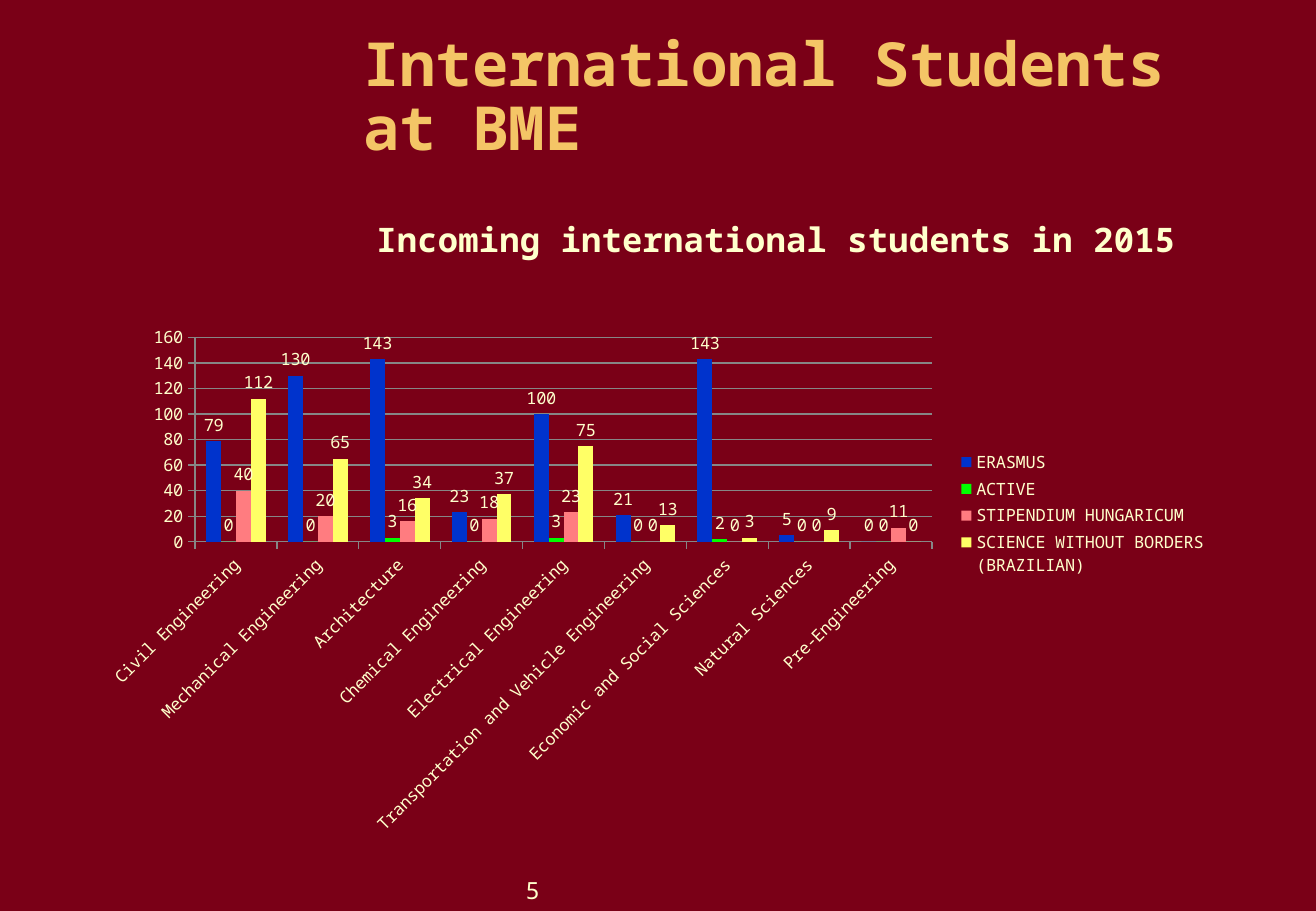
"""Build the slide on incoming international students."""
from lxml import etree
from pptx import Presentation
from pptx import util as u
from pptx.chart.data import CategoryChartData
from pptx.dml.color import RGBColor
from pptx.enum import chart as ch, text as tx
from pptx.oxml import parse_xml
from pptx.oxml.ns import nsdecls, qn

HEAD = "International Students at BME"
SUB = "Incoming international students in 2015"
PAGE = "5"
CATS = ["Civil Engineering", "Mechanical Engineering", "Architecture",
        "Chemical Engineering", "Electrical Engineering",
        "Transportation and Vehicle Engineering",
        "Economic and Social Sciences", "Natural Sciences", "Pre-Engineering"]
DATA = [
    ("ERASMUS", "blue", (79, 130, 143, 23, 100, 21, 143, 5, 0)),
    ("ACTIVE", "green", (0, 0, 3, 0, 3, 0, 2, 0, 0)),
    ("STIPENDIUM HUNGARICUM", "pink", (40, 20, 16, 18, 23, 0, 0, 0, 11)),
    ("SCIENCE WITHOUT BORDERS (BRAZILIAN)", "lemon",
     (112, 65, 34, 37, 75, 13, 3, 9, 0)),
]
COLORS = {"back": "7A0017", "gold": "F4C566", "cream": "FFFFCC",
          "grid": "868686", "blue": "0033CC", "green": "00FF00",
          "pink": "FF7C80", "lemon": "FFFF66"}
FONT = "Noto Sans Mono"
BOXES = {"head": (208, 16, 541.5, 85.5), "page": (304.5, 515.5, 163, 24.5),
         "chart": (52, 106, 670, 397)}


def color(key):
    return RGBColor.from_string(COLORS[key])


def put(obj, **vals):
    for key, val in vals.items():
        setattr(obj, key, val)


def style(font, size, key, bold=False):
    put(font, name=FONT, size=u.Pt(size), bold=bold)
    font.color.rgb = color(key)


def box(name):
    return [u.Pt(v) for v in BOXES[name]]


def place(node, spot, **vals):
    """Give a chart part a fixed place, as shares of the chart."""
    for old in node.findall(qn("c:layout")):
        node.remove(old)
    lay = etree.Element(qn("c:layout"))
    man = etree.SubElement(lay, qn("c:manualLayout"))
    for tag, val in vals.items():
        etree.SubElement(man, qn("c:" + tag)).set("val", str(val))
    node.insert(spot, lay)


def add_head(slide):
    title = slide.shapes.title
    put(title, **dict(zip(("left", "top", "width", "height"), box("head"))))
    frame = title.text_frame
    put(frame, text=HEAD, word_wrap=True, auto_size=tx.MSO_AUTO_SIZE.NONE,
        vertical_anchor=tx.MSO_ANCHOR.MIDDLE)
    para = frame.paragraphs[0]
    put(para, alignment=tx.PP_ALIGN.LEFT, line_spacing=0.88)
    run = para.runs[0]
    style(run.font, 36, "gold", True)
    shade = parse_xml(
        f'<a:effectLst {nsdecls("a")}><a:outerShdw dist="35921" dir="2700000">'
        '<a:srgbClr val="000000"/></a:outerShdw></a:effectLst>')
    run.font._element.find(qn("a:solidFill")).addnext(shade)


def add_page(slide):
    frame = slide.shapes.add_textbox(*box("page")).text_frame
    put(frame, text=PAGE, word_wrap=True)
    style(frame.paragraphs[0].runs[0].font, 14, "cream")


def add_bars(slide):
    data = CategoryChartData()
    data.categories = CATS
    for name, _, vals in DATA:
        data.add_series(name, vals)
    kind = ch.XL_CHART_TYPE.COLUMN_CLUSTERED
    chart = slide.shapes.add_chart(kind, *box("chart"), data).chart
    style(chart.font, 10, "cream")
    frame = chart.chart_title.text_frame
    frame.text = SUB
    style(frame.paragraphs[0].runs[0].font, 20, "cream", True)

    plot = chart.plots[0]
    put(plot, gap_width=150, overlap=0, vary_by_categories=False)
    for bar, (_, key, _) in zip(plot.series, DATA):
        bar.format.fill.solid()
        bar.format.fill.fore_color.rgb = color(key)
        labels = bar.data_labels
        put(labels, show_value=True, position=ch.XL_LABEL_POSITION.OUTSIDE_END)
        style(labels.font, 10, "cream")

    cat, val = chart.category_axis, chart.value_axis
    put(val, minimum_scale=0, maximum_scale=160, major_unit=20,
        has_major_gridlines=True)
    for axis in (cat, val):
        put(axis, major_tick_mark=ch.XL_TICK_MARK.OUTSIDE,
            minor_tick_mark=ch.XL_TICK_MARK.NONE)
        style(axis.tick_labels.font, 10, "cream")
    for part in (cat, val, val.major_gridlines):
        part.format.line.width = u.Pt(0.75)
        part.format.line.color.rgb = color("grid")
    turn = cat._element.find(qn("c:txPr")).find(qn("a:bodyPr"))
    turn.set("rot", "-2700000")

    chart.has_legend = True
    key = chart.legend
    put(key, position=ch.XL_LEGEND_POSITION.RIGHT, include_in_layout=False)
    style(key.font, 10, "cream")

    edge = {"xMode": "edge", "yMode": "edge"}
    place(chart.chart_title._element, 1, **edge, x=0.25, y=0.04)
    place(key._element, 1, **edge, x=0.77, y=0.4, w=0.22, h=0.2)
    area = chart._chartSpace.chart.plotArea
    place(area, 0, layoutTarget="inner", **edge,
          x=0.095, y=0.237, w=0.652, h=0.305)


def main():
    deck = Presentation()
    put(deck, slide_width=u.Pt(780), slide_height=u.Pt(540))
    slide = deck.slides.add_slide(deck.slide_layouts[5])
    fill = slide.background.fill
    fill.solid()
    fill.fore_color.rgb = color("back")
    add_head(slide)
    add_bars(slide)
    add_page(slide)
    deck.save("out.pptx")


if __name__ == "__main__":
    main()
